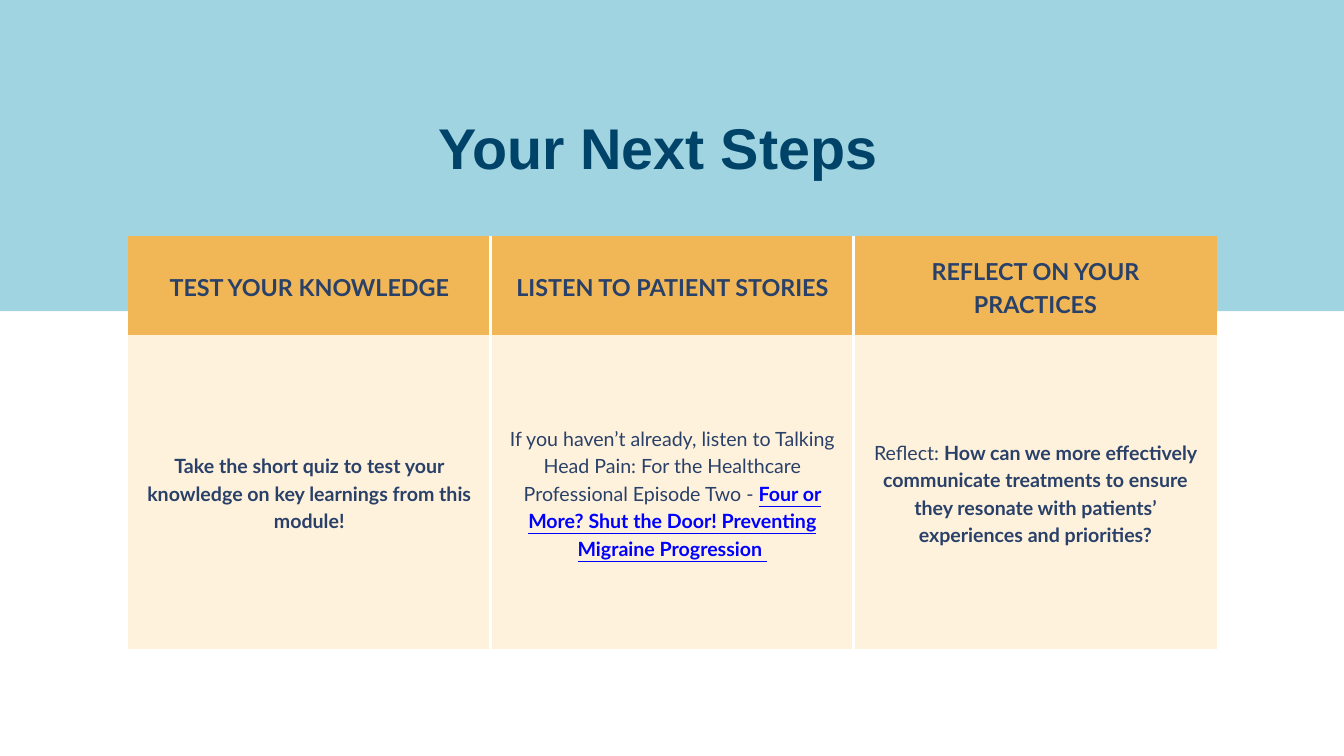
from lxml.etree import SubElement
from pptx import Presentation
from pptx.dml.color import RGBColor
from pptx.enum.shapes import MSO_SHAPE as Shape
from pptx.enum.text import MSO_ANCHOR as Anchor, PP_ALIGN as Align
from pptx.oxml.ns import qn
from pptx.util import Inches, Pt

NAVY, TEAL, LINK = "294069", "004369", "0000FF"
SKY, GOLD, CREAM, WHITE = "A1D4E1", "F1B756", "FFF2DC", "FFFFFF"

HEADS = ["TEST YOUR KNOWLEDGE", "LISTEN TO PATIENT STORIES", "REFLECT ON YOUR PRACTICES"]
STEPS = [
    [("Take the short quiz to test your knowledge on key learnings from this module!", True)],
    [("If you haven’t already, listen to Talking Head Pain: For the Healthcare "
      "Professional Episode Two - ", False),
     ("Four or More? Shut the Door! Preventing Migraine Progression ", True, LINK, True)],
    [("Reflect: ", False),
     ("How can we more effectively communicate treatments to ensure they resonate "
      "with patients’ experiences and priorities?", True)],
]


def paint(code):
    return RGBColor.from_string(code)


class Deck:
    """Holds the style and the current slide, and draws each kind of element."""

    def __init__(self, wide, high):
        self.prs = Presentation()
        self.prs.slide_width, self.prs.slide_height = Inches(wide), Inches(high)
        self.slide = self.prs.slides.add_slide(self.prs.slide_layouts[6])
        self.face, self.inset, self.rule = "Lato", Inches(0.21), Pt(3.75)

    def band(self, left, top, wide, high, color):
        box = self.slide.shapes.add_shape(
            Shape.RECTANGLE, Inches(left), Inches(top), Inches(wide), Inches(high))
        box.shadow.inherit = False
        box.fill.solid()
        box.fill.fore_color.rgb = paint(color)
        box.line.fill.background()

    def text(self, frame, size, lead, runs, face=None):
        para = frame.paragraphs[0]
        para.alignment, para.line_spacing = Align.CENTER, Pt(lead)
        for words, bold, color, under in runs:
            run = para.add_run()
            run.text = words
            font = run.font
            font.name, font.size = face or self.face, Pt(size)
            font.bold, font.underline = bold, under
            font.color.rgb = paint(color)

    def title(self, left, top, wide, high, words):
        box = self.slide.shapes.add_textbox(
            Inches(left), Inches(top), Inches(wide), Inches(high))
        frame = box.text_frame
        frame.word_wrap = True
        frame.margin_left = frame.margin_right = frame.margin_top = frame.margin_bottom = 0
        self.text(frame, 61.5, 86.2, [(words, True, TEAL, False)], "Arial")

    def edges(self, cell, sides):
        props = cell._tc.get_or_add_tcPr()
        for side in "LRTB":
            line = SubElement(props, qn(f"a:ln{side}"))
            if side in sides:
                line.set("w", str(int(self.rule)))
                fill = SubElement(line, qn("a:solidFill"))
                SubElement(fill, qn("a:srgbClr")).set("val", WHITE)
            else:
                line.set("w", "0")
                SubElement(line, qn("a:noFill"))

    def cell(self, cell, color, sides, size, lead, runs):
        self.edges(cell, sides)
        cell.fill.solid()
        cell.fill.fore_color.rgb = paint(color)
        cell.vertical_anchor = Anchor.MIDDLE
        cell.margin_left = cell.margin_right = self.inset
        cell.margin_top = cell.margin_bottom = self.inset
        full = [(run + (NAVY, False))[:4] for run in runs]
        self.text(cell.text_frame, size, lead, full)

    def table(self, left, top, wide, highs, heads, steps):
        count = len(heads)
        grid = self.slide.shapes.add_table(
            len(highs), count, Inches(left), Inches(top),
            Inches(wide), Inches(sum(highs))).table
        grid.first_row = grid.horz_banding = False
        for row, high in zip(grid.rows, highs):
            row.height = Inches(high)
        for col, (head, step) in enumerate(zip(heads, steps)):
            grid.columns[col].width = Inches(wide / count)
            sides = ("L" if col else "") + ("R" if col < count - 1 else "")
            self.cell(grid.cell(0, col), GOLD, sides, 25, 35, [(head, True)])
            self.cell(grid.cell(1, col), CREAM, sides, 21, 29.4, step)


def main():
    deck = Deck(20, 11.25)
    deck.band(0, 0, 20, 4.63, SKY)
    deck.table(1.9, 3.51, 16.21, [1.47, 4.68], HEADS, STEPS)
    deck.title(2.3, 1.5, 14.98, 1.15, "Your Next Steps")
    deck.prs.save("out.pptx")


if __name__ == "__main__":
    main()
